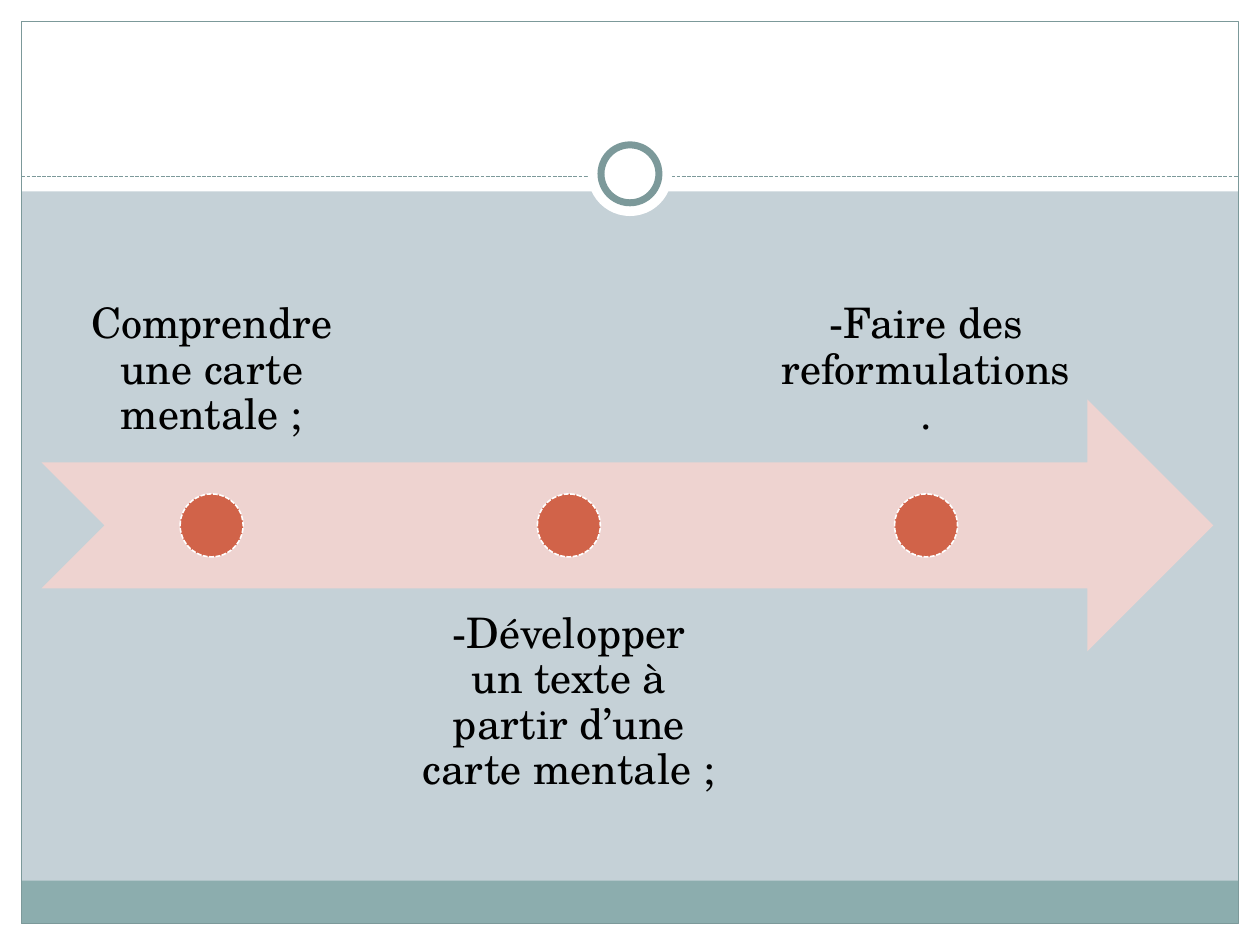
from pptx import Presentation
from pptx.dml.color import RGBColor
from pptx.enum.dml import MSO_LINE_DASH_STYLE as Dash
from pptx.enum.shapes import MSO_CONNECTOR as Connector, MSO_SHAPE as Shape
from pptx.enum.text import MSO_ANCHOR as Anchor, PP_ALIGN as Align
from pptx.oxml.ns import qn
from pptx.util import Inches, Pt
from lxml.etree import SubElement

WIDTH, HEIGHT = 10, 7.5
MARGIN = 0.17
HEADER_HEIGHT = 1.52
RULE_TOP = 1.4
FONT = "TeX Gyre Schola"
WHITE, TEAL, FRAME, PALE_BLUE = "FFFFFF", "8CADAE", "7C999A", "C5D1D7"
PINK, ORANGE, BLACK = "EED3D0", "D16349", "000000"

# Timeline grid: three columns, with a gap of 5 % of the column width
ARROW_LEFT, ARROW_TOP, ARROW_WIDTH = 0.33, 3.17, 9.3
BAND = 2
COLUMN = 2.7
PITCH = COLUMN * 1.05
DOT = BAND / 4
STEPS = [
    "Comprendre une carte mentale ;",
    "-Développer un texte à partir d’une carte mentale ;",
    "-Faire des reformulations.",
]


def color(value):
    return RGBColor.from_string(value)


def style_line(line, line_color, width, dash=None):
    line.color.rgb = color(line_color)
    line.width = Pt(width)
    if dash:
        line.dash_style = dash


def add_figure(slide, kind, left, top, width, height, fill=None, line=None):
    """Add a preset shape; line is (color, width) or (color, width, dash)."""
    shape = slide.shapes.add_shape(
        kind, Inches(left), Inches(top), Inches(width), Inches(height))
    shape.shadow.inherit = False
    if fill:
        shape.fill.solid()
        shape.fill.fore_color.rgb = color(fill)
    else:
        shape.fill.background()
    if line:
        style_line(shape.line, *line)
    else:
        shape.line.fill.background()
    return shape


def add_circle(slide, center_x, center_y, size, **style):
    return add_figure(slide, Shape.OVAL, center_x - size / 2,
                      center_y - size / 2, size, size, **style)


def add_rule(slide, left, right, top, line):
    rule = slide.shapes.add_connector(
        Connector.STRAIGHT, Inches(left), Inches(top), Inches(right), Inches(top))
    style_line(rule.line, *line)
    SubElement(rule._element.spPr, qn("a:effectLst"))


def add_text(slide, text, left, top, width, height, size=24, font=FONT,
             text_color=BLACK, anchor=Anchor.TOP, align=Align.CENTER,
             spacing=0.9, inset=0.19):
    box = slide.shapes.add_textbox(
        Inches(left), Inches(top), Inches(width), Inches(height))
    frame = box.text_frame
    frame.word_wrap = True
    frame.vertical_anchor = anchor
    frame.margin_left = frame.margin_right = Inches(inset)
    frame.margin_top = frame.margin_bottom = Inches(inset)
    paragraph = frame.paragraphs[0]
    paragraph.alignment = align
    paragraph.line_spacing = spacing
    run = paragraph.add_run()
    run.text = text
    run.font.size = Pt(size)
    run.font.name = font
    run.font.color.rgb = color(text_color)


def add_background(slide):
    slide.background.fill.solid()
    slide.background.fill.fore_color.rgb = color(PALE_BLUE)

    # White margins and header
    for bounds in [
        (0, HEIGHT - MARGIN, WIDTH, MARGIN),
        (0, 0, WIDTH, HEADER_HEIGHT),
        (0, 0, MARGIN, HEIGHT),
        (WIDTH - MARGIN, 0, MARGIN, HEIGHT),
    ]:
        add_figure(slide, Shape.RECTANGLE, *bounds, fill=WHITE)

    # Footer band, frame and dashed rule
    inner_width = WIDTH - 2 * MARGIN
    add_figure(slide, Shape.RECTANGLE, MARGIN, 6.99, inner_width, 0.34, fill=TEAL)
    add_figure(slide, Shape.RECTANGLE, MARGIN, MARGIN, inner_width,
               HEIGHT - 2 * MARGIN, line=(FRAME, 0.75))
    add_rule(slide, MARGIN, WIDTH - MARGIN, RULE_TOP,
             (FRAME, 0.75, Dash.SQUARE_DOT))

    # Ring in the middle of the rule
    ring_center = WIDTH / 2, 1.38
    add_circle(slide, *ring_center, 0.67, fill=WHITE)
    add_circle(slide, *ring_center, 0.46, fill=WHITE, line=(FRAME, 4))


def add_timeline(slide):
    add_figure(slide, Shape.NOTCHED_RIGHT_ARROW, ARROW_LEFT, ARROW_TOP,
               ARROW_WIDTH, BAND, fill=PINK)
    middle = ARROW_TOP + BAND / 2

    # Labels alternate above and below the arrow
    for index, step in enumerate(STEPS):
        left = ARROW_LEFT + index * PITCH
        above = index % 2 == 0
        top = middle + DOT - (BAND + 2 * DOT if above else 0)
        add_text(slide, step, left, top, COLUMN, BAND,
                 anchor=Anchor.BOTTOM if above else Anchor.TOP)
        add_circle(slide, left + COLUMN / 2, middle, DOT, fill=ORANGE,
                   line=(WHITE, 0.9, Dash.SQUARE_DOT))


def main():
    presentation = Presentation()
    presentation.slide_width = Inches(WIDTH)
    presentation.slide_height = Inches(HEIGHT)
    slide = presentation.slides.add_slide(presentation.slide_layouts[6])
    add_background(slide)
    add_timeline(slide)
    presentation.save("out.pptx")


if __name__ == "__main__":
    main()
